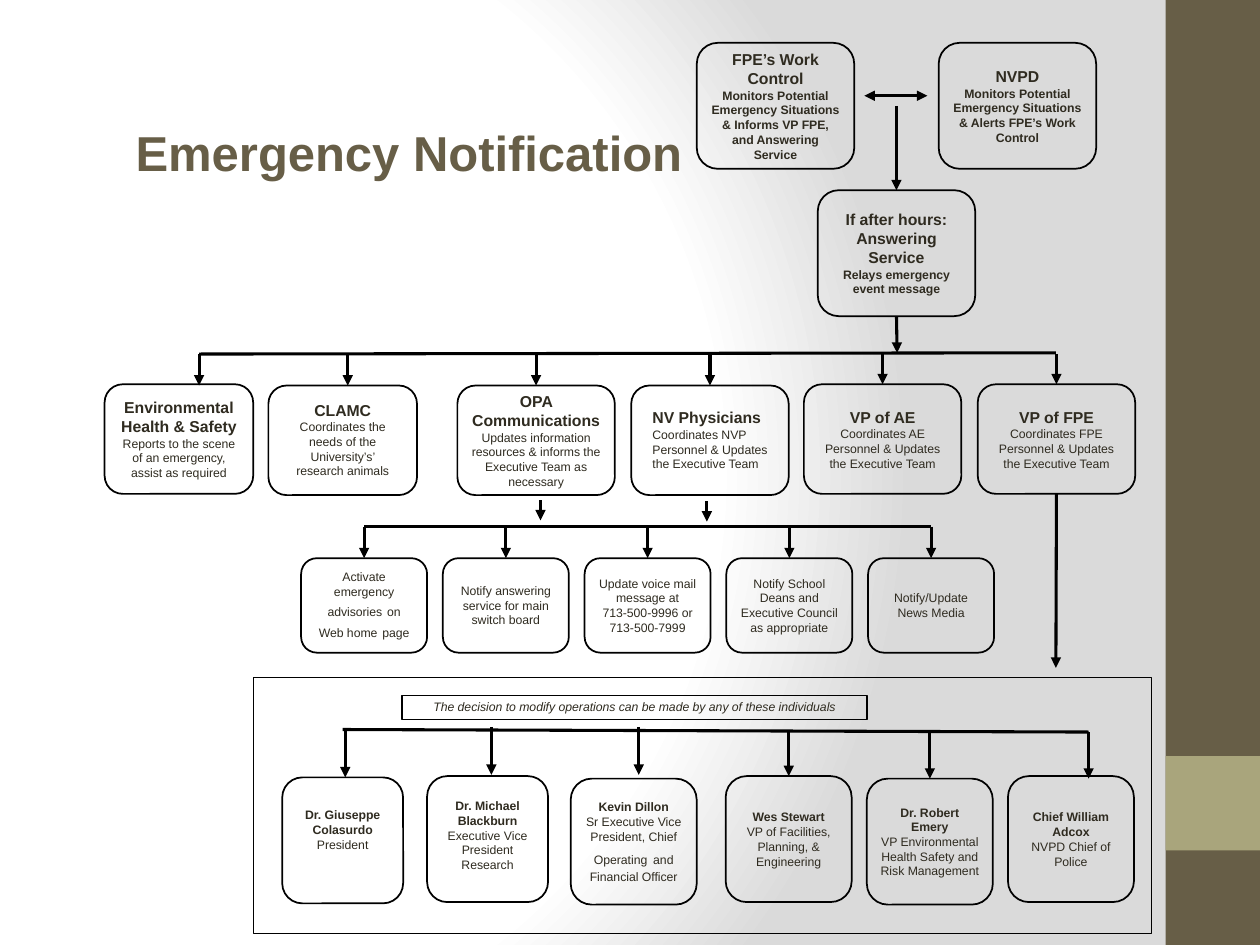
"""Build the emergency notification flow chart slide."""
from lxml import etree
from pptx import Presentation, oxml, util as u
from pptx.dml.color import RGBColor
from pptx.enum import shapes as s, text as t
from pptx.oxml.ns import nsdecls, qn

THEME = {
    "font": "Arial", "ink": "2F2B20", "line": "000000", "brown": "675E47",
    "sage": "A9A57C", "white": "FFFFFF", "grey": "DADADA",
    "title": 28, "head": 9, "body": 7, "thin": 0.75, "edge": 1, "arrow": 1.75,
}
TITLE = "Emergency Notification"
BARS = [((9.25, 0, 0.75, 7.5), "brown"), ((9.25, 6, 0.75, 0.75), "sage")]
FRAME = (2.01, 5.38, 7.13, 2.03)
NOTE = "The decision to modify operations can be made by any of these individuals"

SOURCE = [
    ((5.53, 0.34), "FPE’s Work Control", "Monitors Potential Emergency Situations & Informs VP FPE, and Answering Service"),
    ((7.45, 0.34), "NVPD", "Monitors Potential Emergency Situations & Alerts FPE’s Work Control"),
    ((6.49, 1.51), "If after hours: Answering Service", "Relays emergency event message"),
]
TEAMS = [
    ((0.83, 3.05, 1.18), (1.58, 3.06), "Environmental Health & Safety", "Reports to the scene of an emergency, assist as required"),
    ((2.13, 3.06, 1.18), (2.76, 3.06), "", ""),
    ((3.63, 3.06, 1.25), None, "OPA Communications", "Updates information resources & informs the Executive Team as necessary"),
    ((5.01, 3.06, 1.25), None, "", ""),
    ((6.38, 3.05, 1.25), None, "VP of AE", "Coordinates AE Personnel & Updates the Executive Team"),
    ((7.76, 3.05, 1.25), None, "VP of FPE", "Coordinates FPE Personnel & Updates the Executive Team"),
]
LABELS = [
    ((2.2, 3.13, 1.04, 0.72), "CENTER", "CLAMC", "Coordinates the needs of the University’s’ research animals"),
    ((5.08, 3.19, 1.16, 0.61), "LEFT", "NV Physicians", "Coordinates NVP Personnel & Updates the Executive Team"),
]
TASKS = [
    [(10, "Activate emergency advisories", "on Web home", "page")],
    ["Notify answering service for main switch board"],
    ["Update voice mail message at", "713-500-9996 or 713-500-7999"],
    ["Notify School Deans and Executive Council as appropriate"],
    ["Notify/Update News Media"],
]
PEOPLE = [
    ((2.24, 6.17, 0.96), (2.74, 5.8, 6.17), 0.17, "Dr. Giuseppe Colasurdo", "President"),
    ((3.39, 6.16, 0.96), (3.9, 5.77, 6.15), 0.06, "Dr. Michael Blackburn", "Executive Vice President Research"),
    ((4.53, 6.18, 1), (5.07, 5.77, 6.15), 0, "Kevin Dillon", (12, "Sr Executive Vice President, Chief Operating", "and Financial Officer")),
    ((5.76, 6.16, 1), None, 0, "Wes Stewart", "VP of Facilities, Planning, & Engineering"),
    ((6.88, 6.18, 1), None, 0, "Dr. Robert Emery", "VP Environmental Health Safety and Risk Management"),
    ((8, 6.16, 1), (8.64, 5.81, 6.18), 0, "Chief William Adcox", "NVPD Chief of Police"),
]
BUSES = [(1.58, 2.81, 8.38, 2.8), (2.89, 4.18, 7.39, 4.18), (8.64, 5.81, 2.72, 5.79)]
SHORT = [(4.29, 3.97, 4.29, 4.13), (5.61, 3.98, 5.61, 4.14)]


def tint(name):
    return RGBColor.from_string(THEME[name])


def write(frame, lines, align="CENTER"):
    frame.word_wrap = True
    for i, (words, size, bold, slant) in enumerate(lines):
        para = frame.paragraphs[0] if i == 0 else frame.add_paragraph()
        para.alignment = t.PP_ALIGN[align]
        font = para.font
        font.name, font.size = THEME["font"], u.Pt(THEME[size])
        font.bold, font.italic = bold, slant
        font.color.rgb = tint("ink")
        gap, *parts = words if isinstance(words, tuple) else (0, words)
        for j, part in enumerate(parts):
            if j:
                space = para.add_run()
                space.text, space.font.size = " ", u.Pt(gap)
            para.add_run().text = part


def pair(head, body, size="head", strong=False):
    return [(head, size, True, False), (body, "body", strong, False)] if head else []


def shape(slide, kind, at, edge=None, fill=None):
    item = slide.shapes.add_shape(kind, *map(u.Inches, at))
    item.shadow.inherit = False
    if fill:
        item.fill.solid()
        item.fill.fore_color.rgb = tint(fill)
        item.line.fill.background()
    else:
        item.fill.background()
        item.line.color.rgb, item.line.width = tint("line"), u.Pt(THEME[edge])
    return item


def box(slide, at, lines=(), lift=0, pad=0.06, kind=s.MSO_SHAPE.FLOWCHART_ALTERNATE_PROCESS):
    item = shape(slide, kind, at, "edge")
    frame = item.text_frame
    frame.margin_left = frame.margin_right = u.Inches(pad)
    frame.margin_top, frame.margin_bottom = u.Inches(0.03), u.Inches(0.03 + lift)
    frame.vertical_anchor = t.MSO_ANCHOR.MIDDLE
    write(frame, lines)
    return item


def link(slide, ends, heads=("tailEnd",), start=None, stop=None):
    line = slide.shapes.add_connector(s.MSO_CONNECTOR.STRAIGHT, *map(u.Inches, ends))
    line.line.color.rgb, line.line.width = tint("line"), u.Pt(THEME["arrow"])
    for head in heads:
        etree.SubElement(line.line._get_or_add_ln(), qn("a:" + head), type="triangle")
    etree.SubElement(line._element.spPr, qn("a:effectLst"))
    if start:
        line.begin_connect(start, 2)
    if stop:
        line.end_connect(stop, 0)


def drop(slide, item, top):
    mid = (item.left + item.width / 2) / u.Inches(1)
    link(slide, (mid, top, mid, item.top / u.Inches(1)), stop=item)


def paint(slide):
    stops = "".join(f'<a:gs pos="{pos}000"><a:srgbClr val="{THEME[name]}"/></a:gs>'
                    for pos, name in ((0, "white"), (75, "white"), (100, "grey")))
    grad = oxml.parse_xml(
        f'<a:gradFill {nsdecls("a")} rotWithShape="1"><a:gsLst>{stops}</a:gsLst><a:path path="circle">'
        '<a:fillToRect l="20000" t="50000" r="100000" b="50000"/></a:path></a:gradFill>')
    back = slide.background._cSld.get_or_add_bgPr()
    back.replace(back[0], grad)


def name(slide):
    title = slide.shapes.title
    title.left, title.top, title.width, title.height = map(u.Inches, (0.17, 0.67, 5.83, 1.07))
    frame = title.text_frame
    write(frame, [(TITLE, "title", True, False)])
    frame.paragraphs[0].font.color.rgb = tint("brown")
    frame.vertical_anchor, frame.auto_size = t.MSO_ANCHOR.MIDDLE, t.MSO_AUTO_SIZE.NONE
    frame.margin_left = u.Inches(0.42)


def main():
    deck = Presentation()
    deck.slide_width, deck.slide_height = u.Inches(10), u.Inches(7.5)
    slide = deck.slides.add_slide(deck.slide_layouts[5])
    paint(slide)
    for at, fill in BARS:
        shape(slide, s.MSO_SHAPE.RECTANGLE, at, fill=fill)
    name(slide)
    shape(slide, s.MSO_SHAPE.RECTANGLE, FRAME, "thin")
    note = box(slide, (3.19, 5.52, 3.69, 0.19), [(NOTE, "body", False, True)],
               kind=s.MSO_SHAPE.RECTANGLE)
    note.text_frame.vertical_anchor = t.MSO_ANCHOR.TOP

    for ends in BUSES:
        link(slide, ends, ())
    for ends in SHORT:
        link(slide, ends)
    for at, head, body in SOURCE:
        relay = box(slide, (*at, 1.25, 1), pair(head, body, strong=True))
    link(slide, (6.86, 0.76, 7.36, 0.76), ("headEnd", "tailEnd"))
    drop(slide, relay, 0.84)
    link(slide, (7.12, 2.51, 7.12, 2.8), start=relay)

    for at, end, head, body in TEAMS:
        team = box(slide, (*at, 0.87), pair(head, body))
        if end:
            link(slide, (end[0], 2.81, *end))
        else:
            drop(slide, team, 2.81)
    link(slide, (8.38, 3.92, 8.38, 5.3), start=team)
    for at, align, head, body in LABELS:
        label = slide.shapes.add_textbox(*map(u.Inches, at))
        write(label.text_frame, pair(head, body), align)

    for i, lines in enumerate(TASKS):
        task = box(slide, (2.39 + 4.5 / 4 * i, 4.43, 1, 0.75),
                   [(words, "body", False, False) for words in lines], pad=0.07)
        drop(slide, task, 4.18)
    for at, end, lift, head, body in PEOPLE:
        person = box(slide, (*at, 1), pair(head, body, "body"), lift)
        if end:
            x, top, foot = end
            link(slide, (x, top, x, foot))
        else:
            drop(slide, person, 5.81)
    deck.save("out.pptx")


if __name__ == "__main__":
    main()
